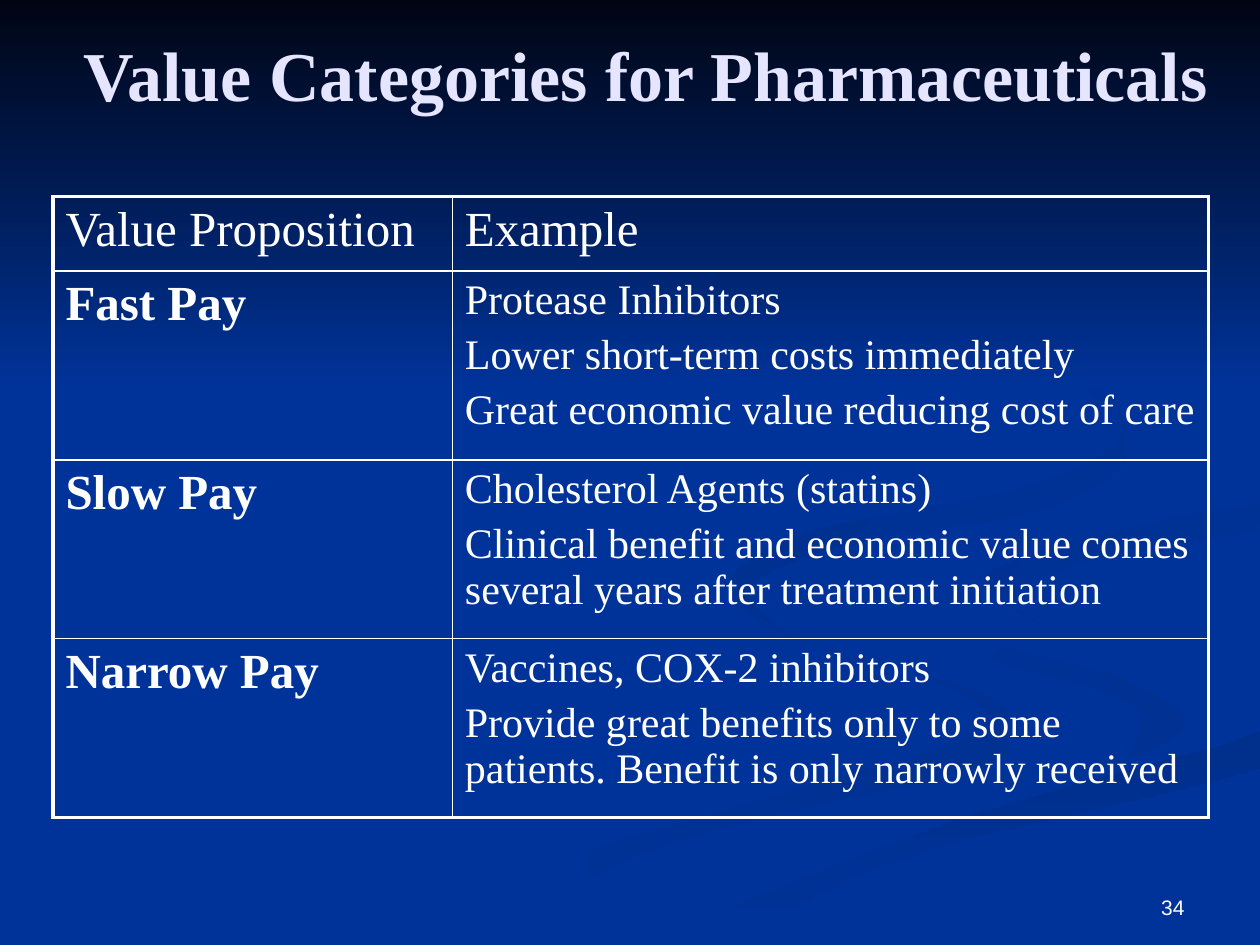
import pptx
import pptx.util
import pptx.dml.color
import pptx.enum.text
import pptx.oxml
import pptx.oxml.ns

Inches, Pt = pptx.util.Inches, pptx.util.Pt
ALIGN, ANCHOR = pptx.enum.text.PP_ALIGN, pptx.enum.text.MSO_ANCHOR
COLORS = {"blue": "003399", "night": "000514", "title": "E5E5FF", "white": "FFFFFF",
          "shade": "003193", "deep": "002F8C", "dusk": "003091"}


def color(name):
    return pptx.dml.color.RGBColor.from_string(COLORS[name])


def write(frame, lines, font, size, ink, bold=False, align=ALIGN.LEFT):
    frame.word_wrap = True
    frame.text = "\n".join(lines)
    for index, para in enumerate(frame.paragraphs):
        para.alignment = align
        para.space_before = Pt(size * 0.2 if index else 0)
        for span in para.runs:
            span.font.name, span.font.size, span.font.bold = font, Pt(size), bold
            span.font.color.rgb = color(ink)


deck = pptx.Presentation()
deck.slide_width, deck.slide_height = Inches(10), Inches(7.5)
page = deck.slides.add_slide(deck.slide_layouts[6])
page.background.fill.solid()
page.background.fill.fore_color.rgb = color("blue")

# Background ribbons: start colour, end colour, angle, knots of a closed curve in inches
ribbons = [
    ("blue", "shade", 0, [
        (7.8, 5.5), (6.4, 5.1), (5.75, 4.6), (6.1, 5), (7.4, 5.4), (7.8, 5.8),
        (6.2, 6.3), (4.2, 6.9), (3, 7.5), (3.6, 7.5), (5.3, 6.7), (7.7, 6.1), (8, 5.8)]),
    ("blue", "shade", 45, [
        (9.4, 5.7), (8.7, 5.3), (7.6, 5), (7.25, 4.65), (7.8, 5.2), (9, 5.6),
        (8.95, 6.05)]),
    ("deep", "blue", 90, [
        (5, 7.5), (5.7, 7.5), (7.2, 6.8), (10, 6.1), (10, 5.8), (7.6, 6.5)]),
    ("blue", "blue", 0, [
        (7.25, 4.65), (7.9, 5.1), (9.3, 5.5), (9.3, 5.9), (7, 6.5), (4.8, 7.5),
        (5, 7.5), (7.6, 6.5), (10, 5.8), (10, 5.4), (8.3, 5), (7.8, 4.6),
        (8.6, 4.25), (10, 4), (10, 3.85), (7.9, 4.2)]),
    ("dusk", "blue", 45, [
        (7.8, 4.6), (8.25, 4.95), (8.05, 4.7), (8.8, 4.4), (10, 4.2), (10, 4),
        (8.5, 4.3)]),
    ("deep", "blue", 45, [
        (6.8, 4.3), (8.4, 4), (8.95, 3.4), (7.6, 2.35), (8.9, 3.3), (8.2, 3.85),
        (6.5, 4.2), (5.8, 4.6), (6.2, 5), (5.95, 4.65)]),
    ("night", "blue", 90, [(0, 0), (0, 3.08), (10, 3.08), (10, 0)]),
]
STEPS = 5
for start, end, angle, knots in ribbons:
    outline = knots
    if start != "night":
        # Catmull-Rom curve through the knots, kept inside their bounds
        bounds = [(min(axis), max(axis)) for axis in zip(*knots)]
        outline = []
        for k in range(len(knots)):
            near = [knots[(k + shift) % len(knots)] for shift in (-1, 0, 1, 2)]
            for t in (step / STEPS for step in range(STEPS)):
                point = [b + t / 2 * (c - a + t * (2 * a - 5 * b + 4 * c - d
                                                   + t * (3 * (b - c) + d - a)))
                         for a, b, c, d in zip(*near)]
                outline.append([min(max(v, low), high)
                                for v, (low, high) in zip(point, bounds)])
    corners = [(round(x * 100), round(y * 100)) for x, y in outline]
    builder = page.shapes.build_freeform(*corners[0], scale=Inches(0.01))
    builder.add_line_segments(corners[1:], close=True)
    ribbon = builder.convert_to_shape()
    ribbon.shadow.inherit = False
    ribbon.line.fill.background()
    ribbon.fill.gradient()
    ribbon.fill.gradient_angle = -angle % 360
    for stop, name, position in zip(ribbon.fill.gradient_stops, (start, end), (0, 1)):
        stop.color.rgb = color(name)
        stop.position = position

# Title and page number
for place, text, font, size, ink, bold, align, anchor in [
        ((0.5, 0, 9.25, 1.17), "Value Categories for Pharmaceuticals",
         "Times New Roman", 40, "title", True, ALIGN.CENTER, ANCHOR.MIDDLE),
        ((7.17, 6.83, 2.33, 0.52), "34",
         "Arial", 12, "white", False, ALIGN.RIGHT, ANCHOR.BOTTOM)]:
    box = page.shapes.add_textbox(*map(Inches, place))
    box.text_frame.vertical_anchor = anchor
    write(box.text_frame, [text], font, size, ink, bold, align)

# Table of value categories
rows = [
    (0.59, "Value Proposition", ["Example"]),
    (1.5, "Fast Pay", ["Protease Inhibitors", "Lower short-term costs immediately",
                       "Great economic value reducing cost of care"]),
    (1.42, "Slow Pay", ["Cholesterol Agents (statins)",
                        "Clinical benefit and economic value comes several years "
                        "after treatment initiation"]),
    (1.42, "Narrow Pay", ["Vaccines, COX-2 inhibitors",
                          "Provide great benefits only to some patients. "
                          "Benefit is only narrowly received"]),
]
table = page.shapes.add_table(len(rows), 2, Inches(0.42), Inches(1.56),
                              Inches(9.17), Inches(4.93)).table
table.first_row = table.horz_banding = False
table.columns[0].width, table.columns[1].width = Inches(3.17), Inches(6)
for r, (height, category, examples) in enumerate(rows):
    table.rows[r].height = Inches(height)
    for c, lines in enumerate(([category], examples)):
        cell = table.cell(r, c)
        cell.fill.background()
        size = 24 if r and c else 28
        write(cell.text_frame, lines, "Times New Roman", size, "white", r > 0 and c == 0)
        # Thick outer frame, thin inner lines
        outer = {"L": c == 0, "R": c == 1, "T": r == 0, "B": r == len(rows) - 1}
        for index, (side, thick) in enumerate(outer.items()):
            border = pptx.oxml.parse_xml(
                f'<a:ln{side} {pptx.oxml.ns.nsdecls("a")} w="{Pt(2.25 if thick else 1)}">'
                f'<a:solidFill><a:srgbClr val="{COLORS["white"]}"/></a:solidFill></a:ln{side}>')
            cell._tc.get_or_add_tcPr().insert(index, border)

deck.save("out.pptx")
